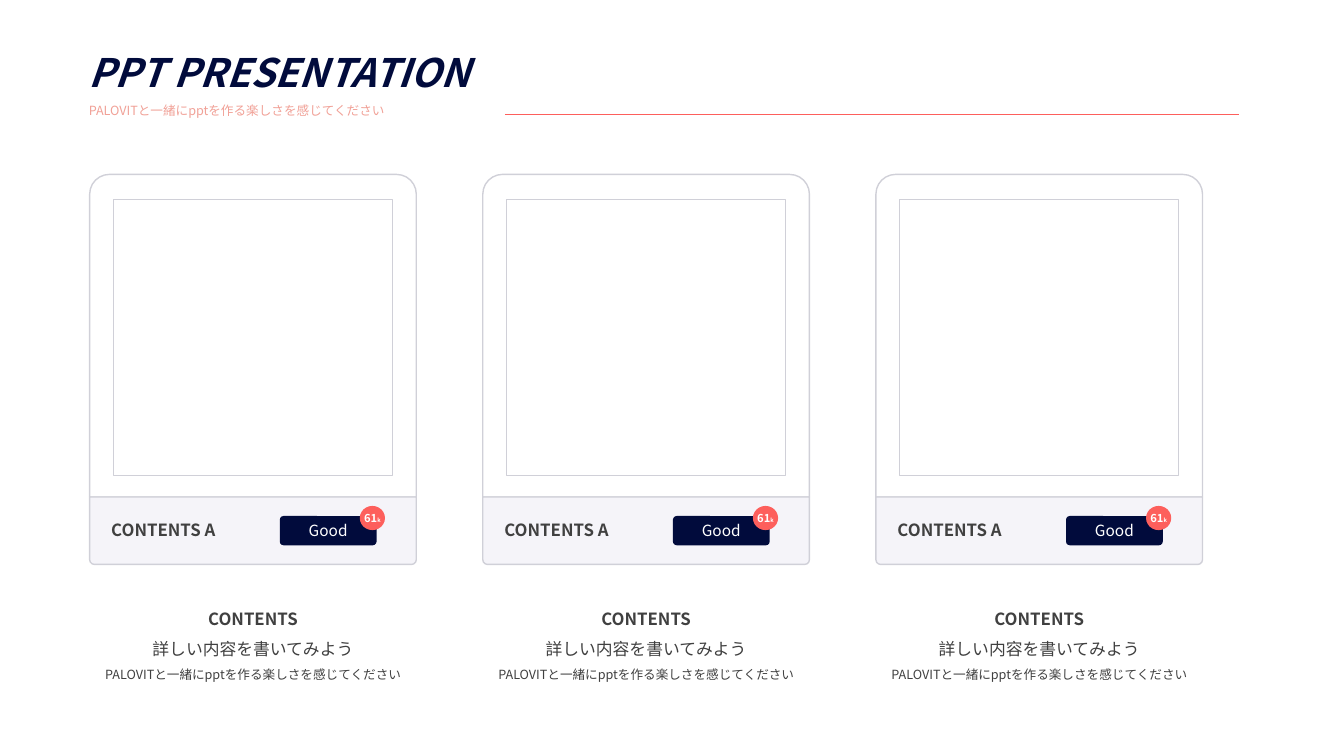
from dataclasses import dataclass, field

from lxml.etree import SubElement
from pptx import Presentation
from pptx.dml.color import RGBColor
from pptx.enum.shapes import MSO_CONNECTOR, MSO_SHAPE as Shape
from pptx.enum.text import MSO_ANCHOR, MSO_AUTO_SIZE, PP_ALIGN
from pptx.oxml.ns import qn
from pptx.util import Pt

FONT = "Noto Sans CJK KR"
NAVY = RGBColor(0x01, 0x0B, 0x3C)
PINK = RGBColor(0xF1, 0xA1, 0x97)
CORAL = RGBColor(0xFD, 0x5F, 0x5C)
GREY = RGBColor(0xD0, 0xD0, 0xD8)
LILAC = RGBColor(0xF5, 0xF4, 0xF9)
DARK = RGBColor(0x40, 0x40, 0x40)
WHITE = RGBColor(0xFF, 0xFF, 0xFF)

SLOGAN = "PALOVITと一緒にpptを作る楽しさを感じてください"
CARD_X, CARD_PITCH, CARD_W, CARD_COUNT = 64.1, 280.8, 233.3, 3


@dataclass
class Run:
    text: str
    size: float
    color: RGBColor
    bold: bool = False
    italic: bool = False


@dataclass
class Part:
    """One shape of a card; dx counts from the card's left edge."""
    kind: Shape
    dx: float
    y: float
    w: float
    h: float
    fill: RGBColor
    line: RGBColor | None = None
    adj: tuple[float, ...] = ()
    runs: list[Run] = field(default_factory=list)
    align: PP_ALIGN = PP_ALIGN.CENTER
    inset: float = 7.2
    wrap: bool = True


CARD = [
    # Frame and footer
    Part(Shape.ROUND_2_SAME_RECTANGLE, 0, 124.6, CARD_W, 230.4, WHITE, GREY, (0.061, 0)),
    Part(Shape.ROUND_2_SAME_RECTANGLE, 0, 355, CARD_W, 48.2, LILAC, GREY, (0, 0.071),
         [Run("CONTENTS A", 12, DARK, True)], PP_ALIGN.LEFT, 14.4),
    # Button and badge
    Part(Shape.ROUNDED_RECTANGLE, 135.8, 368.6, 69.1, 20.9, NAVY, None, (0.127,),
         [Run("Good", 11, WHITE)]),
    Part(Shape.OVAL, 192.9, 361.4, 18, 17.3, CORAL, None, (),
         [Run("61", 8, WHITE, True), Run("k", 4, WHITE, True)], wrap=False),
    # Image area
    Part(Shape.RECTANGLE, 16.9, 142.6, 199.4, 197.3, WHITE, GREY),
]
CAPTION = [Run("CONTENTS", 12, DARK, True), Run("詳しい内容を書いてみよう", 12, DARK),
           Run(SLOGAN, 9, DARK)]
HEADING = [Run("PPT PRESENTATION", 28, NAVY, True, True), Run(SLOGAN, 9, PINK)]


def add_run(p, run: Run) -> None:
    r = p.add_run()
    r.text = run.text
    fmt = {"name": FONT, "size": Pt(run.size), "bold": run.bold, "italic": run.italic}
    for name, value in fmt.items():
        setattr(r.font, name, value)
    r.font.color.rgb = run.color
    SubElement(r.font._element, qn("a:ea"), typeface=FONT)


def fill_lines(tf, lines: list[Run], align: PP_ALIGN) -> None:
    """Write one paragraph per run, in a frame that grows with its text."""
    fmt = {"word_wrap": True, "auto_size": MSO_AUTO_SIZE.SHAPE_TO_FIT_TEXT,
           "vertical_anchor": MSO_ANCHOR.TOP}
    for name, value in fmt.items():
        setattr(tf, name, value)
    for i, run in enumerate(lines):
        p = tf.add_paragraph() if i else tf.paragraphs[0]
        p.alignment, p.line_spacing = align, 1.5
        add_run(p, run)


def add_part(s, part: Part, x: float) -> None:
    sp = s.shapes.add_shape(part.kind, Pt(x + part.dx), Pt(part.y), Pt(part.w), Pt(part.h))
    sp.shadow.inherit = False
    sp.fill.solid()
    sp.fill.fore_color.rgb = part.fill
    if part.line is None:
        sp.line.fill.background()
    else:
        sp.line.color.rgb, sp.line.width = part.line, Pt(1)
    for i, value in enumerate(part.adj):
        sp.adjustments[i] = value
    if part.runs:
        tf = sp.text_frame
        fmt = {"word_wrap": part.wrap, "vertical_anchor": MSO_ANCHOR.MIDDLE,
               "margin_left": Pt(part.inset)}
        for name, value in fmt.items():
            setattr(tf, name, value)
        p = tf.paragraphs[0]
        p.alignment = part.align
        for run in part.runs:
            add_run(p, run)


def add_card(s, x: float) -> None:
    for part in CARD:
        add_part(s, part, x)
    caption = s.shapes.add_textbox(Pt(x), Pt(424.1), Pt(CARD_W), Pt(67))
    fill_lines(caption.text_frame, CAPTION, PP_ALIGN.CENTER)


def main() -> None:
    prs = Presentation()
    prs.slide_width, prs.slide_height = Pt(960), Pt(540)
    s = prs.slides.add_slide(prs.slide_layouts[5])

    # Heading
    title = s.shapes.title
    box = {"left": 56.2, "top": 14.4, "width": 480.2, "height": 74.9}
    for name, value in box.items():
        setattr(title, name, Pt(value))
    fill_lines(title.text_frame, HEADING, PP_ALIGN.LEFT)

    # Cards
    for i in range(CARD_COUNT):
        add_card(s, CARD_X + i * CARD_PITCH)

    # Rule beside the heading
    rule = s.shapes.add_connector(MSO_CONNECTOR.STRAIGHT, Pt(360.7), Pt(81.4), Pt(884.9), Pt(81.4))
    rule.line.color.rgb, rule.line.width = CORAL, Pt(0.5)
    SubElement(rule._element.spPr, qn("a:effectLst"))

    prs.save("out.pptx")


if __name__ == "__main__":
    main()
